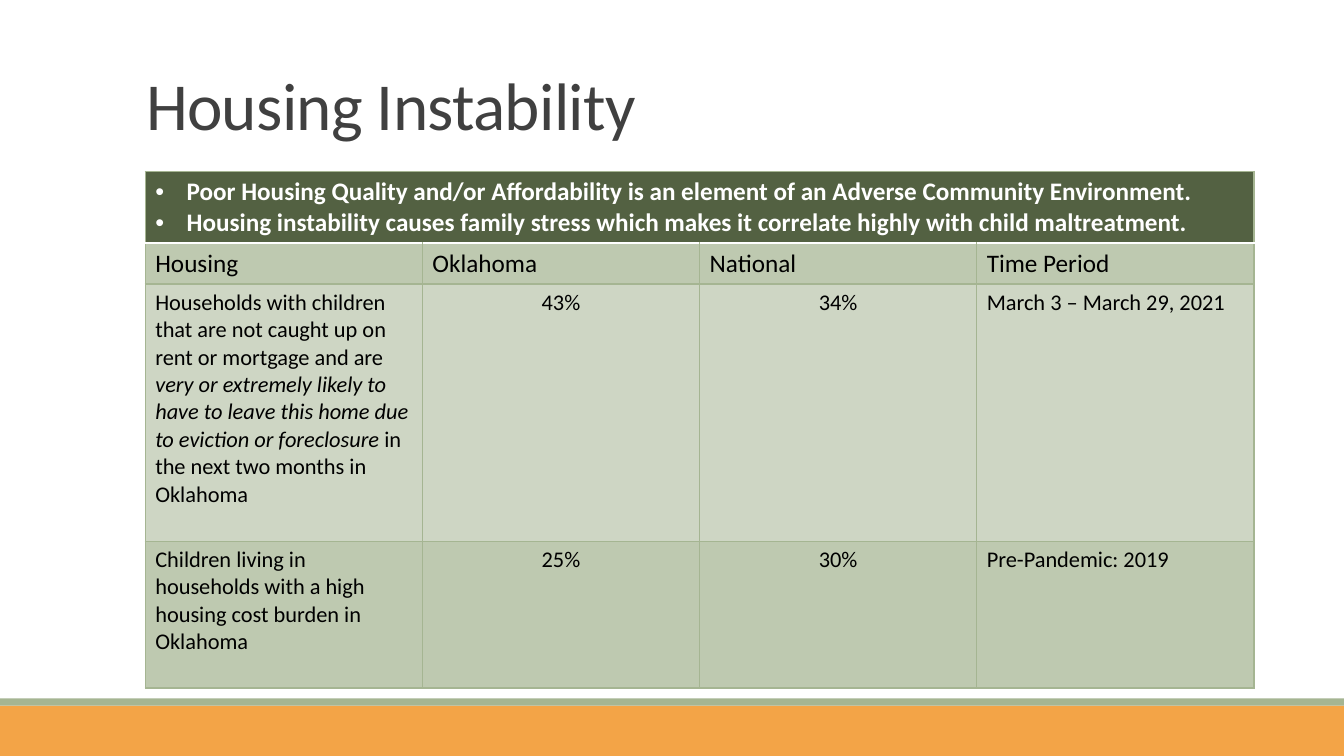
from lxml.etree import SubElement
from pptx import Presentation
from pptx.dml.color import RGBColor
from pptx.enum.shapes import MSO_SHAPE
from pptx.enum.text import MSO_ANCHOR, MSO_AUTO_SIZE, PP_ALIGN
from pptx.oxml.ns import qn
from pptx.util import Cm, Pt

WHITE = RGBColor(0xFF, 0xFF, 0xFF)
BLACK = RGBColor(0, 0, 0)
CHARCOAL = RGBColor(0x40, 0x40, 0x40)
ORANGE = RGBColor(0xF3, 0xA4, 0x47)
SAGE = RGBColor(0xA5, 0xB5, 0x92)
FOREST = RGBColor(0x53, 0x61, 0x42)
LIGHT_SAGE = RGBColor(0xCE, 0xD6, 0xC4)
MID_SAGE = RGBColor(0xBE, 0xC9, 0xB0)

FONT = "Calibri"
SLIDE_WIDTH, SLIDE_HEIGHT = Cm(33.87), Cm(19.05)
COLUMN_WIDTH = Cm(6.985)
ROW_HEIGHTS = [Cm(1.8), Cm(1.03), Cm(6.48), Cm(3.7)]
ROW_FILLS = [FOREST, MID_SAGE, LIGHT_SAGE, MID_SAGE]
ROW_SIZES = [18, 18, 16, 16]

MESSAGES = [
    "Poor Housing Quality and/or Affordability is an element of an Adverse Community Environment.",
    "Housing instability causes family stress which makes it correlate highly with child maltreatment.",
]
EVICTION_MEASURE = [
    ("Households with children that are not caught up on rent or mortgage and are ", False),
    ("very or extremely likely to have to leave this home due to eviction or foreclosure ", True),
    ("in the next two months in Oklahoma", False),
]
BURDEN_MEASURE = [
    ("Children living in households with a high housing cost burden in Oklahoma", False),
]
HEADINGS = ["Housing", "Oklahoma", "National", "Time Period"]
MEASURES = [
    (EVICTION_MEASURE, "43%", "34%", "March 3 – March 29, 2021"),
    (BURDEN_MEASURE, "25%", "30%", "Pre-Pandemic: 2019"),
]


def add_bar(slide, top, height, color):
    bar = slide.shapes.add_shape(MSO_SHAPE.RECTANGLE, 0, top, SLIDE_WIDTH, height)
    bar.shadow.inherit = False
    bar.fill.solid()
    bar.fill.fore_color.rgb = color
    bar.line.fill.background()


def style_font(font, size, color, bold=False):
    font.name = FONT
    font.size = Pt(size)
    font.color.rgb = color
    font.bold = bold


def set_title(slide, wording):
    title = slide.shapes.title
    title.left, title.top, title.width, title.height = Cm(3.43), Cm(1.6), Cm(27.94), Cm(2.16)
    frame = title.text_frame
    frame.text = wording
    frame.auto_size = MSO_AUTO_SIZE.NONE
    frame.vertical_anchor = MSO_ANCHOR.BOTTOM
    heading = frame.paragraphs[0]
    heading.alignment = PP_ALIGN.LEFT
    heading.line_spacing = 0.85
    style_font(heading.font, 48, CHARCOAL)
    heading.runs[0].font._element.set("spc", "-50")


def set_borders(cell, **special):
    properties = cell._tc.get_or_add_tcPr()
    for position, side in enumerate("LRTB"):
        color, width = special.get(side, (SAGE, 1))
        border = SubElement(properties, qn(f"a:ln{side}"), w=str(Pt(width)))
        fill = SubElement(border, qn("a:solidFill"))
        SubElement(fill, qn("a:srgbClr"), val=str(color))
        properties.insert(position, border)


def add_bullet(paragraph):
    properties = paragraph._p.get_or_add_pPr()
    properties.set("marL", str(Cm(0.79)))
    properties.set("indent", str(-Cm(0.79)))
    SubElement(properties, qn("a:buFont"), typeface="Arial")
    SubElement(properties, qn("a:buChar"), char="•")


def fill_messages(cell):
    cell.text = "\n".join(MESSAGES)
    for message in cell.text_frame.paragraphs:
        style_font(message.font, ROW_SIZES[0], WHITE, bold=True)
        add_bullet(message)


def fill_entry(cell, entry, size):
    paragraph = cell.text_frame.paragraphs[0]
    style_font(paragraph.font, size, BLACK)
    parts = [(entry, False)] if isinstance(entry, str) else entry
    for wording, italic in parts:
        run = paragraph.add_run()
        run.text = wording
        if italic:
            run.font.italic = True
    if parts[0][0].endswith("%"):
        paragraph.alignment = PP_ALIGN.CENTER


def add_housing_table(slide):
    rows, columns = len(ROW_HEIGHTS), len(HEADINGS)
    table = slide.shapes.add_table(
        rows, columns, Cm(3.66), Cm(4.32), COLUMN_WIDTH * columns, sum(ROW_HEIGHTS)
    ).table
    table.first_row = table.horz_banding = False
    for column in table.columns:
        column.width = COLUMN_WIDTH
    divider = (WHITE, 1.25)
    special_borders = [{"B": divider}, {"T": divider}, {}, {}]
    for row, height, color, special in zip(table.rows, ROW_HEIGHTS, ROW_FILLS, special_borders):
        row.height = height
        for cell in row.cells:
            cell.fill.solid()
            cell.fill.fore_color.rgb = color
            set_borders(cell, **special)
    table.cell(0, 0).merge(table.cell(0, columns - 1))
    fill_messages(table.cell(0, 0))
    for row_index, entries in enumerate([HEADINGS, *MEASURES], start=1):
        for column_index, entry in enumerate(entries):
            fill_entry(table.cell(row_index, column_index), entry, ROW_SIZES[row_index])


def main():
    deck = Presentation()
    deck.slide_width, deck.slide_height = SLIDE_WIDTH, SLIDE_HEIGHT
    slide = deck.slides.add_slide(deck.slide_layouts[5])
    add_bar(slide, Cm(17.78), Cm(1.27), ORANGE)
    add_bar(slide, Cm(17.6), Cm(0.18), SAGE)
    set_title(slide, "Housing Instability")
    add_housing_table(slide)
    deck.save("out.pptx")


if __name__ == "__main__":
    main()
